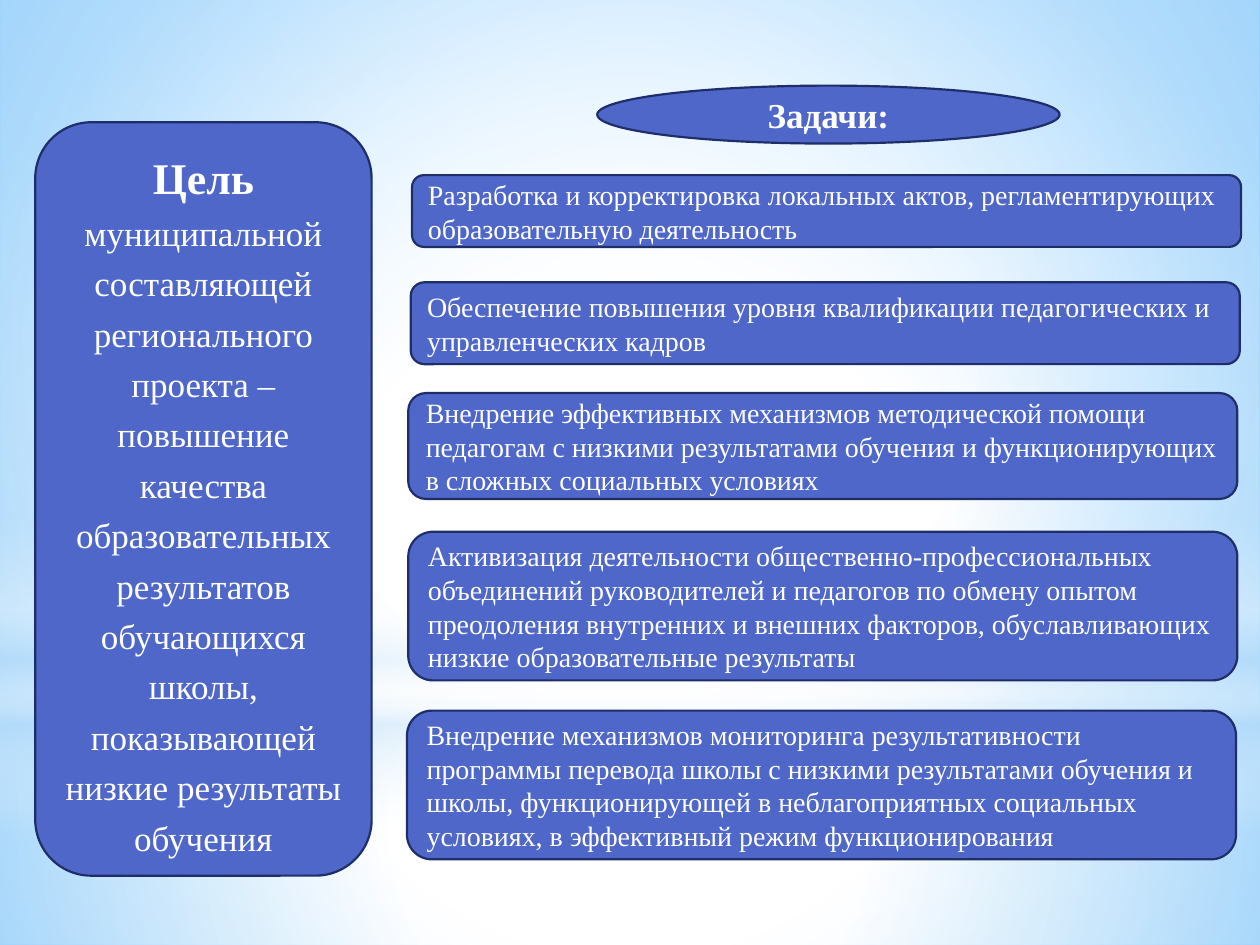
from dataclasses import dataclass

from lxml.etree import SubElement
from pptx import Presentation
from pptx.dml.color import RGBColor
from pptx.enum.shapes import MSO_SHAPE
from pptx.enum.text import MSO_ANCHOR, PP_ALIGN
from pptx.oxml.ns import qn
from pptx.util import Inches, Pt


@dataclass(frozen=True)
class Theme:
    font: str = "Times New Roman"
    panel: str = "4E67C8"
    outline: str = "1F2E69"
    text: str = "FFFFFF"
    white: str = "FFFFFF"
    sky: str = "63BCFF"
    haze: str = "B4DCFA"
    goal_title: int = 25
    heading: int = 20
    task: int = 16
    outline_width: float = 1.25


THEME = Theme()
CENTRE = (50, 50, 50, 50)

GOAL_TITLE = "Цель "
GOAL = ("муниципальной составляющей регионального проекта – повышение качества "
        "образовательных результатов обучающихся школы, показывающей низкие "
        "результаты обучения")

# Left, top, height and wording of each task
TASKS = [
    (3.27, 1.39, 0.57, "Разработка и корректировка локальных актов, "
     "регламентирующих образовательную деятельность"),
    (3.26, 2.24, 0.65, "Обеспечение повышения уровня квалификации "
     "педагогических и управленческих кадров"),
    (3.24, 3.12, 0.84, "Внедрение эффективных механизмов методической помощи "
     "педагогам с низкими результатами обучения и функционирующих в сложных "
     "социальных условиях"),
    (3.24, 4.22, 1.18, "Активизация деятельности общественно-профессиональных "
     "объединений руководителей и педагогов по обмену опытом преодоления "
     "внутренних и внешних факторов, обуславливающих низкие образовательные "
     "результаты"),
    (3.23, 5.64, 1.18, "Внедрение механизмов мониторинга результативности "
     "программы перевода школы с низкими результатами обучения и школы, "
     "функционирующей в неблагоприятных социальных условиях, в эффективный "
     "режим функционирования"),
]
TASK_WIDTH = 6.58

# Soft layers of the backdrop: preset, box, stops (position, colour, opacity), focus
BACKDROP = [
    (MSO_SHAPE.RECTANGLE, (0, 5.58, 10, 1.92),
     [(0, THEME.white, 91), (37, THEME.white, 76), (100, THEME.haze, 79)], CENTRE),
    (MSO_SHAPE.RECTANGLE, (0, 0, 10, 5.58),
     [(0, THEME.white, 89), (48, THEME.white, 62), (100, THEME.haze, 79)], CENTRE),
    (MSO_SHAPE.RECTANGLE, (0, 4.12, 10, 2.5),
     [(0, THEME.white, 0), (29, THEME.white, 30), (45, THEME.haze, 40),
      (55, THEME.white, 26), (65, THEME.haze, 60), (100, THEME.white, 0)], None),
    (MSO_SHAPE.OVAL, (0, 1.75, 10, 5.58),
     [(0, THEME.white, 100), (56, THEME.white, 0)], CENTRE),
]


def set_gradient(fill, owner, stops, focus):
    """Circular gradient around focus, or a vertical one without it."""
    fill.gradient()
    gradient = next(owner.iter(qn("a:gradFill")))
    for child in list(gradient):
        gradient.remove(child)
    stop_list = SubElement(gradient, qn("a:gsLst"))
    for position, colour, opacity in stops:
        stop = SubElement(stop_list, qn("a:gs"), pos=str(position * 1000))
        tint = SubElement(stop, qn("a:srgbClr"), val=colour)
        if opacity < 100:
            SubElement(tint, qn("a:alpha"), val=str(opacity * 1000))
    if focus:
        circle = SubElement(gradient, qn("a:path"), path="circle")
        edges = {side: str(share * 1000) for side, share in zip("ltrb", focus)}
        SubElement(circle, qn("a:fillToRect"), **edges)
    else:
        SubElement(gradient, qn("a:lin"), ang="5400000", scaled="0")


def add_plain_shape(slide, preset, box):
    shape = slide.shapes.add_shape(preset, *map(Inches, box))
    shape.shadow.inherit = False
    return shape


def add_backdrop(slide):
    sky_stops = [(0, THEME.white, 100), (42, THEME.white, 100), (100, THEME.sky, 100)]
    set_gradient(slide.background.fill, slide.element, sky_stops, (24, 44, 24, 12))
    for preset, box, stops, focus in BACKDROP:
        layer = add_plain_shape(slide, preset, box)
        layer.line.fill.background()
        set_gradient(layer.fill, layer.element, stops, focus)


def add_panel(slide, preset, box, runs, paragraph_format):
    """Blue outlined shape; runs are (text, size, bold)."""
    panel = add_plain_shape(slide, preset, box)
    panel.fill.solid()
    panel.fill.fore_color.rgb = RGBColor.from_string(THEME.panel)
    panel.line.color.rgb = RGBColor.from_string(THEME.outline)
    panel.line.width = Pt(THEME.outline_width)
    frame = panel.text_frame
    frame.word_wrap = True
    frame.vertical_anchor = MSO_ANCHOR.MIDDLE
    paragraph = frame.paragraphs[0]
    for key, value in paragraph_format.items():
        setattr(paragraph, key, value)
    for text, size, bold in runs:
        run = paragraph.add_run()
        run.text = text
        run.font.color.rgb = RGBColor.from_string(THEME.text)
        for key, value in {"name": THEME.font, "size": Pt(size), "bold": bold}.items():
            setattr(run.font, key, value)


def main():
    deck = Presentation()
    deck.slide_width, deck.slide_height = Inches(10), Inches(7.5)
    slide = deck.slides.add_slide(deck.slide_layouts[6])
    add_backdrop(slide)

    # Goal on the left
    add_panel(slide, MSO_SHAPE.ROUNDED_RECTANGLE, (0.28, 0.97, 2.67, 5.98),
              [(GOAL_TITLE, THEME.goal_title, True), (GOAL, THEME.heading, False)],
              {"alignment": PP_ALIGN.CENTER, "line_spacing": 1.2, "space_after": Pt(6)})

    # Tasks on the right, under their heading
    add_panel(slide, MSO_SHAPE.OVAL, (4.74, 0.68, 3.67, 0.46),
              [("Задачи:", THEME.heading, True)], {"alignment": PP_ALIGN.CENTER})
    for left, top, height, task in TASKS:
        add_panel(slide, MSO_SHAPE.ROUNDED_RECTANGLE, (left, top, TASK_WIDTH, height),
                  [(task, THEME.task, False)], {"alignment": PP_ALIGN.LEFT})

    deck.save("out.pptx")


if __name__ == "__main__":
    main()
